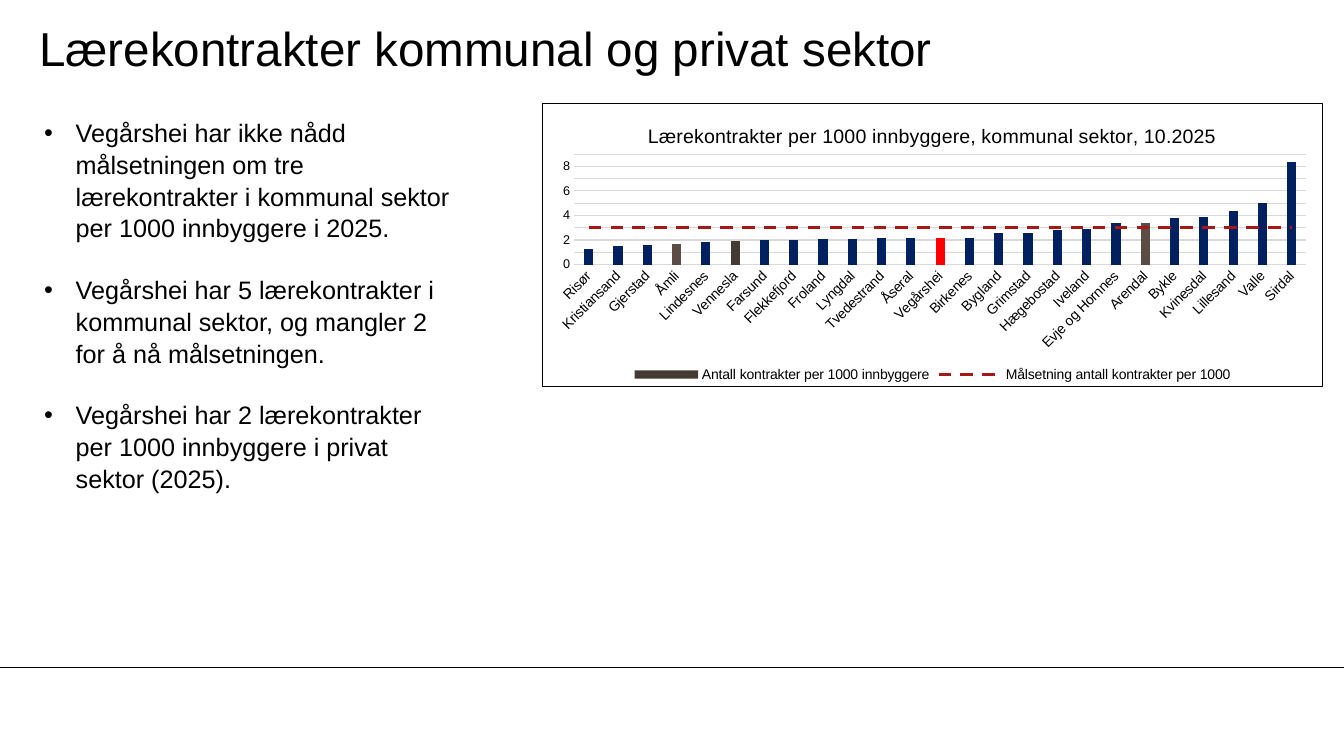
from lxml.etree import SubElement
from pptx import Presentation
from pptx.chart.data import CategoryChartData
from pptx.dml.color import RGBColor
from pptx.enum.chart import XL_CHART_TYPE, XL_LEGEND_POSITION, XL_MARKER_STYLE, XL_TICK_MARK
from pptx.enum.dml import MSO_LINE
from pptx.enum.shapes import MSO_CONNECTOR
from pptx.enum.text import MSO_ANCHOR
from pptx.oxml import parse_xml
from pptx.oxml.ns import nsdecls, qn
from pptx.util import Pt

FONT = "Arial"
BLACK = RGBColor(0x00, 0x00, 0x00)
GRID_GREY = RGBColor(0xD9, 0xD9, 0xD9)
NAVY = RGBColor(0x00, 0x20, 0x60)
BROWN = RGBColor(0x5B, 0x4D, 0x46)
DARK_BROWN = RGBColor(0x44, 0x3A, 0x34)
RED = RGBColor(0xFF, 0x00, 0x00)
TARGET_RED = RGBColor(0xA7, 0x17, 0x16)

TITLE = "Lærekontrakter kommunal og privat sektor"
FINDINGS = [
    "Vegårshei har ikke nådd målsetningen om tre lærekontrakter i kommunal sektor per 1000 innbyggere i 2025.",
    "Vegårshei har 5 lærekontrakter i kommunal sektor, og mangler 2 for å nå målsetningen.",
    "Vegårshei har 2 lærekontrakter per 1000 innbyggere i privat sektor (2025).",
]
CHART_TITLE = "Lærekontrakter per 1000 innbyggere, kommunal sektor, 10.2025"
CONTRACTS = {
    "Risør": 1.3, "Kristiansand": 1.5, "Gjerstad": 1.6, "Åmli": 1.7,
    "Lindesnes": 1.8, "Vennesla": 1.9, "Farsund": 2, "Flekkefjord": 2,
    "Froland": 2.1, "Lyngdal": 2.1, "Tvedestrand": 2.2, "Åseral": 2.2,
    "Vegårshei": 2.2, "Birkenes": 2.2, "Bygland": 2.6, "Grimstad": 2.6,
    "Hægebostad": 2.8, "Iveland": 2.9, "Evje og Hornnes": 3.4,
    "Arendal": 3.4, "Bykle": 3.8, "Kvinesdal": 3.9, "Lillesand": 4.4,
    "Valle": 5, "Sirdal": 8.4,
}
TARGET = 3
SPECIAL_BARS = {"Åmli": BROWN, "Arendal": BROWN, "Vennesla": DARK_BROWN, "Vegårshei": RED}


def set_font(font, size):
    """Give a font the face and colour shared by the slide."""
    font.name = FONT
    font.size = Pt(size)
    font.bold = False
    font.color.rgb = BLACK


def add_bullet(paragraph, indent):
    """Give a paragraph a round bullet with a hanging indent in points."""
    properties = paragraph._p.get_or_add_pPr()
    properties.set("marL", str(Pt(indent)))
    properties.set("indent", str(-Pt(indent)))
    SubElement(properties, qn("a:buFont")).set("typeface", FONT)
    SubElement(properties, qn("a:buChar")).set("char", "•")


def add_text(slide, paragraphs, left, top, width, height, size=18, inset=None,
             anchor=MSO_ANCHOR.TOP, bullet_indent=None, spacing=None, gap=0):
    """Add a wrapped text box with one paragraph per string."""
    frame = slide.shapes.add_textbox(Pt(left), Pt(top), Pt(width), Pt(height)).text_frame
    frame.word_wrap = True
    frame.vertical_anchor = anchor
    if inset is not None:
        frame.margin_left = frame.margin_right = Pt(inset)
        frame.margin_top = frame.margin_bottom = Pt(inset)
    for index, text in enumerate(paragraphs):
        paragraph = frame.add_paragraph() if index else frame.paragraphs[0]
        if spacing:
            paragraph.line_spacing = spacing
        if index:
            paragraph.space_before = Pt(gap)
        if bullet_indent:
            add_bullet(paragraph, bullet_indent)
        run = paragraph.add_run()
        run.text = text
        set_font(run.font, size)


def add_rule(slide, y, width):
    """Draw a thin horizontal line from the left edge."""
    rule = slide.shapes.add_connector(MSO_CONNECTOR.STRAIGHT, Pt(0), Pt(y), Pt(width), Pt(y))
    rule.line.color.rgb = BLACK
    rule.line.width = Pt(0.75)
    SubElement(rule._element.spPr, qn("a:effectLst"))


def place(part, position, **fractions):
    """Fix a chart part at fractions of the chart's size."""
    for old in part.findall(qn("c:layout")):
        part.remove(old)
    layout = parse_xml(f"<c:layout {nsdecls('c')}><c:manualLayout/></c:layout>")
    manual = layout[0]
    if "w" in fractions:
        SubElement(manual, qn("c:layoutTarget")).set("val", "inner")
    for mode in ("xMode", "yMode"):
        SubElement(manual, qn(f"c:{mode}")).set("val", "edge")
    for name, value in fractions.items():
        SubElement(manual, qn(f"c:{name}")).set("val", str(value))
    part.insert(position, layout)


def turn_into_line(chart):
    """Move the last bar series to a line plot on the same axes."""
    bars = chart.plots[0]._element
    target = bars.findall(qn("c:ser"))[-1]
    for bar_only in target.findall(qn("c:invertIfNegative")):
        target.remove(bar_only)
    axes = "".join(f'<c:axId val="{axis.get("val")}"/>' for axis in bars.findall(qn("c:axId")))
    lines = parse_xml(
        f'<c:lineChart {nsdecls("c")}><c:grouping val="standard"/><c:varyColors val="0"/>'
        f'<c:marker val="1"/>{axes}</c:lineChart>'
    )
    lines.insert(2, target)
    bars.addnext(lines)
    series = chart.plots[1].series[0]
    series.smooth = False
    series.marker.style = XL_MARKER_STYLE.NONE
    series.format.line.color.rgb = TARGET_RED
    series.format.line.width = Pt(2.25)
    series.format.line.dash_style = MSO_LINE.DASH


def style_axes(chart):
    """Format both axes and the gridlines."""
    towns, values = chart.category_axis, chart.value_axis
    for axis, size in ((towns, 10), (values, 9)):
        axis.major_tick_mark = axis.minor_tick_mark = XL_TICK_MARK.NONE
        set_font(axis.tick_labels.font, size)
    towns.format.line.color.rgb = GRID_GREY
    towns.format.line.width = Pt(0.75)
    towns._element.find(qn("c:txPr")).find(qn("a:bodyPr")).set("rot", "-2700000")
    values.minimum_scale, values.maximum_scale, values.major_unit = 0, 9, 1
    values.tick_labels.number_format = "0"
    values.tick_labels.number_format_is_linked = False
    values.format.line.fill.background()
    values.major_gridlines.format.line.color.rgb = GRID_GREY
    values.major_gridlines.format.line.width = Pt(0.75)


def add_contract_chart(slide, left, top, width, height):
    """Add the bars per municipality with the dashed target line."""
    data = CategoryChartData(number_format="0.0")
    data.categories = list(CONTRACTS)
    data.add_series("Antall kontrakter per 1000 innbyggere", list(CONTRACTS.values()))
    data.add_series("Målsetning antall kontrakter per 1000", [TARGET] * len(CONTRACTS))
    chart = slide.shapes.add_chart(
        XL_CHART_TYPE.COLUMN_CLUSTERED, Pt(left), Pt(top), Pt(width), Pt(height), data
    ).chart
    set_font(chart.font, 10)

    bars = chart.plots[0]
    bars.gap_width, bars.overlap, bars.vary_by_categories = 219, -27, False
    contracts = bars.series[0]
    contracts.format.fill.solid()
    contracts.format.fill.fore_color.rgb = DARK_BROWN
    for index, town in enumerate(CONTRACTS):
        fill = contracts.points[index].format.fill
        fill.solid()
        fill.fore_color.rgb = SPECIAL_BARS.get(town, NAVY)
    turn_into_line(chart)
    style_axes(chart)

    heading = chart.chart_title.text_frame
    heading.text = CHART_TITLE
    set_font(heading.paragraphs[0].runs[0].font, 14)
    place(chart.chart_title._element, 1, x=0.13, y=0.06)
    chart.has_legend = True
    chart.legend.position = XL_LEGEND_POSITION.BOTTOM
    chart.legend.include_in_layout = False
    set_font(chart.legend.font, 10)

    space = chart._chartSpace
    frame = space.find(qn("c:chart"))
    place(frame.find(qn("c:plotArea")), 0, x=0.04, y=0.18, w=0.94, h=0.39)
    frame.addnext(parse_xml(
        f'<c:spPr {nsdecls("c", "a")}><a:noFill/><a:ln w="{Pt(0.75)}"><a:solidFill>'
        f'<a:srgbClr val="{BLACK}"/></a:solidFill></a:ln></c:spPr>'
    ))


def main():
    """Build the slide and save it."""
    deck = Presentation()
    deck.slide_width, deck.slide_height = Pt(960), Pt(540)
    slide = deck.slides.add_slide(deck.slide_layouts[6])
    add_rule(slide, 476.6, 960)
    add_text(slide, [TITLE], 28, 7.2, 799, 54, size=34, inset=0, anchor=MSO_ANCHOR.MIDDLE)
    add_text(slide, FINDINGS, 24.5, 79.2, 311.8, 334, bullet_indent=22.5, spacing=1.05, gap=21.5)
    add_contract_chart(slide, 387.4, 73.4, 557.3, 203)
    deck.save("out.pptx")


if __name__ == "__main__":
    main()
